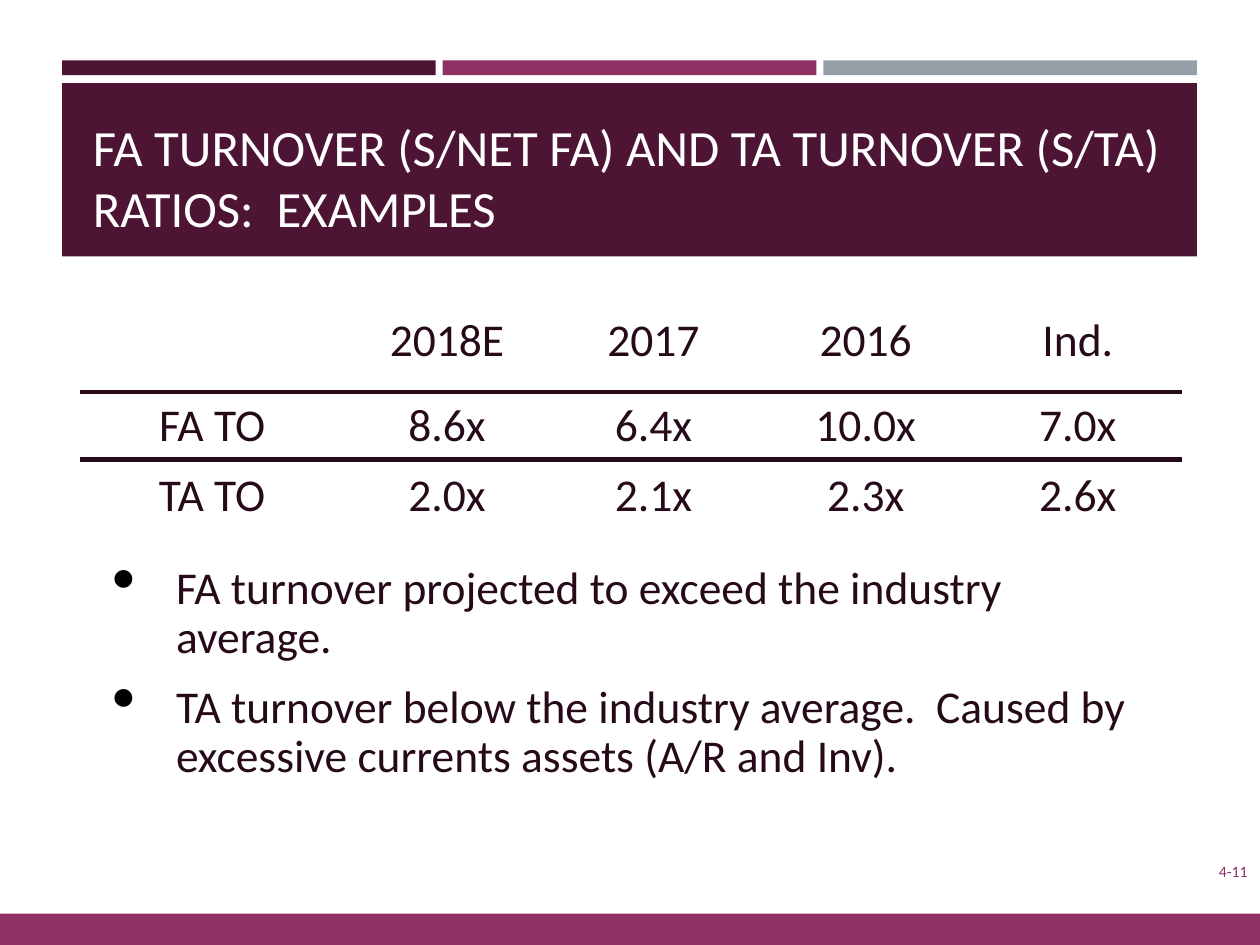
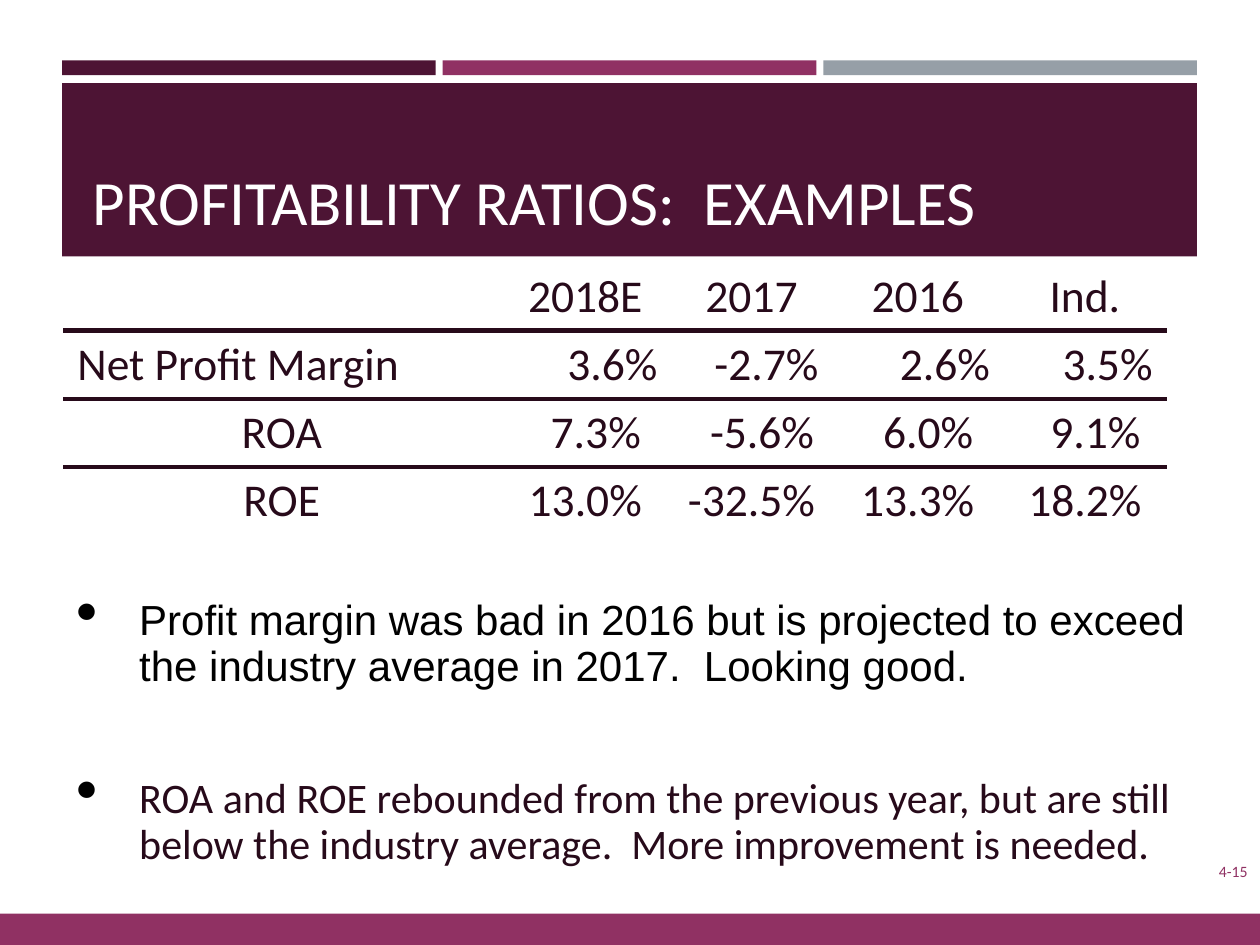
from pptx import Presentation
from pptx.dml.color import RGBColor
from pptx.enum.shapes import MSO_SHAPE as SHAPE
from pptx.enum.text import MSO_ANCHOR as ANCHOR, PP_ALIGN as ALIGN
from pptx.oxml import parse_xml
from pptx.oxml.ns import nsdecls
from pptx.util import Pt

COLORS = {"plum": "4D1434", "berry": "903163", "gray": "969FA7",
          "ink": "270A1A", "white": "FFFFFF", "black": "000000"}
FONT = "Calibri"
W, H = 720, 540
HEADER = (35.5, 34.5, 648.5, 112)
FOOTER = (0, 522, W, 18)
TITLE = (46, 54.5, 629.5, 85)
NUMBER = (646.5, 485.5, 73.5, 24.5)
CELL_INSET = 7.75
ROA_SHIFT = 12


def rgb(name):
    return RGBColor.from_string(COLORS[name])


def style(p, size, color, font=FONT, align=ALIGN.LEFT):
    p.alignment = align
    p.font.size, p.font.name = Pt(size), font
    p.font.color.rgb = rgb(color)


def add_bar(s, box, color):
    sp = s.shapes.add_shape(SHAPE.RECTANGLE, *map(Pt, box))
    sp.shadow.inherit = False
    sp.fill.solid()
    sp.fill.fore_color.rgb = rgb(color)
    sp.line.fill.background()


def add_text(s, box, anchor=ANCHOR.TOP):
    tf = s.shapes.add_textbox(*map(Pt, box)).text_frame
    tf.word_wrap = True
    tf.vertical_anchor = anchor
    return tf


def add_header(s, box, gap=4, strip=8.5, band_top=13):
    """Three thin strips above the solid title band."""
    x, y, w, h = box
    bar_w = (w - 2 * gap) / 3
    for i, color in enumerate(("plum", "berry", "gray")):
        add_bar(s, (x + i * (bar_w + gap), y, bar_w, strip), color)
    add_bar(s, (x, y + band_top, w, h - band_top), "plum")


def add_line(s, box, text, size, color, anchor, align=ALIGN.LEFT):
    p = add_text(s, box, anchor).paragraphs[0]
    p.text = text
    style(p, size, color, align=align)


def add_frame(prs, title, title_size, number):
    """New slide with everything the slides share."""
    s = prs.slides.add_slide(prs.slide_layouts[6])
    add_header(s, HEADER)
    add_bar(s, FOOTER, "berry")
    add_line(s, TITLE, title, title_size, "white", ANCHOR.BOTTOM)
    add_line(s, NUMBER, number, 9, "berry", ANCHOR.MIDDLE, ALIGN.RIGHT)
    return s


def rule_cell(cell, above, below):
    tc_pr = cell._tc.get_or_add_tcPr()
    for tag, shown in (("lnB", below), ("lnT", above)):
        if shown:
            tc_pr.insert(0, parse_xml(
                f'<a:{tag} {nsdecls("a")} w="{Pt(3)}"><a:solidFill>'
                f'<a:srgbClr val="{COLORS["ink"]}"/></a:solidFill></a:{tag}>'))


def add_ratios(s, left, top, col_widths, row_heights, rows, ruled,
               aligns=None, shifts=None):
    """Ratio table; ruled holds the rows underlined, aligns and shifts
    the rows whose (label, value) alignment or value inset differ."""
    aligns, shifts = aligns or {}, shifts or {}
    table = s.shapes.add_table(
        len(rows), len(col_widths), Pt(left), Pt(top),
        Pt(sum(col_widths)), Pt(sum(row_heights))).table
    table.first_row = table.horz_banding = False
    for col, width in zip(table.columns, col_widths):
        col.width = Pt(width)
    for r, values in enumerate(rows):
        table.rows[r].height = Pt(row_heights[r])
        label_align, value_align = aligns.get(r, (ALIGN.CENTER, ALIGN.CENTER))
        for c, value in enumerate(values):
            cell = table.cell(r, c)
            cell.fill.background()
            cell.vertical_anchor = ANCHOR.MIDDLE if r else ANCHOR.TOP
            cell.margin_left = Pt(CELL_INSET + (shifts.get(r, 0) if c else 0))
            cell.margin_right = Pt(CELL_INSET)
            rule_cell(cell, r - 1 in ruled, r in ruled)
            p = cell.text_frame.paragraphs[0]
            p.text = value
            style(p, 26, "ink", align=value_align if c else label_align)


def add_bullets(s, box, size, items, after=12, indent=36.5):
    """Bulleted paragraphs from (text, font, color) items."""
    tf = add_text(s, box)
    for i, (text, font, color) in enumerate(items):
        p = tf.add_paragraph() if i else tf.paragraphs[0]
        p.text = text
        style(p, size, color, font)
        p.line_spacing = 0.9
        p.space_after = Pt(after)
        p_pr = p._p.get_or_add_pPr()
        p_pr.set("marL", str(Pt(indent)))
        p_pr.set("indent", str(Pt(-indent)))
        for xml in (f'<a:buClr {nsdecls("a")}><a:srgbClr val="{COLORS["black"]}"/></a:buClr>',
                    f'<a:buSzPct {nsdecls("a")} val="150000"/>',
                    f'<a:buChar {nsdecls("a")} char="•"/>'):
            p_pr.insert_element_before(parse_xml(xml), "a:tabLst", "a:defRPr", "a:extLst")


def add_turnover_slide(prs):
    s = add_frame(prs, "FA TURNOVER (S/NET FA) AND TA TURNOVER (S/TA) RATIOS:  EXAMPLES",
                  29, "4-11")
    add_ratios(s, 46, 175.5, (150.5, 118, 118, 124.5, 118), (48.5, 38.5, 42),
               (("", "2018E", "2017", "2016", "Ind."),
                ("FA TO", "8.6x", "6.4x", "10.0x", "7.0x"),
                ("TA TO", "2.0x", "2.1x", "2.3x", "2.6x")), ruled={0})
    add_bullets(s, (57, 319.5, 607, 180), 26, (
        ("FA turnover projected to exceed the industry average.", FONT, "ink"),
        ("TA turnover below the industry average.  Caused by excessive "
         "currents assets (A/R and Inv).", FONT, "ink")))


def add_profitability_slide(prs):
    s = add_frame(prs, "PROFITABILITY RATIOS:  EXAMPLES", 36, "4-15")
    add_ratios(s, 36.5, 150, (249, 98, 92, 98, 93), (39,) * 4,
               (("", "2018E", "2017", "2016", "Ind."),
                ("Net Profit Margin", "3.6%", "-2.7%", "2.6%", "3.5%"),
                ("ROA", "7.3%", "-5.6%", "6.0%", "9.1%"),
                ("ROE", "13.0%", "-32.5%", "13.3%", "18.2%")), ruled={0, 1, 2},
               aligns={1: (ALIGN.LEFT, ALIGN.RIGHT)}, shifts={2: ROA_SHIFT})
    add_bullets(s, (36.5, 339, 664.5, 186), 24, (
        ("Profit margin was bad in 2016 but is projected to exceed the "
         "industry average in 2017.  Looking good.", "Arial", "black"),
        ("ROA and ROE rebounded from the previous year, but are still below "
         "the industry average.  More improvement is needed.", FONT, "ink")),
        after=50, indent=36)


def main():
    prs = Presentation()
    prs.slide_width, prs.slide_height = Pt(W), Pt(H)
    add_turnover_slide(prs)
    add_profitability_slide(prs)
    prs.save("out.pptx")


if __name__ == "__main__":
    main()
